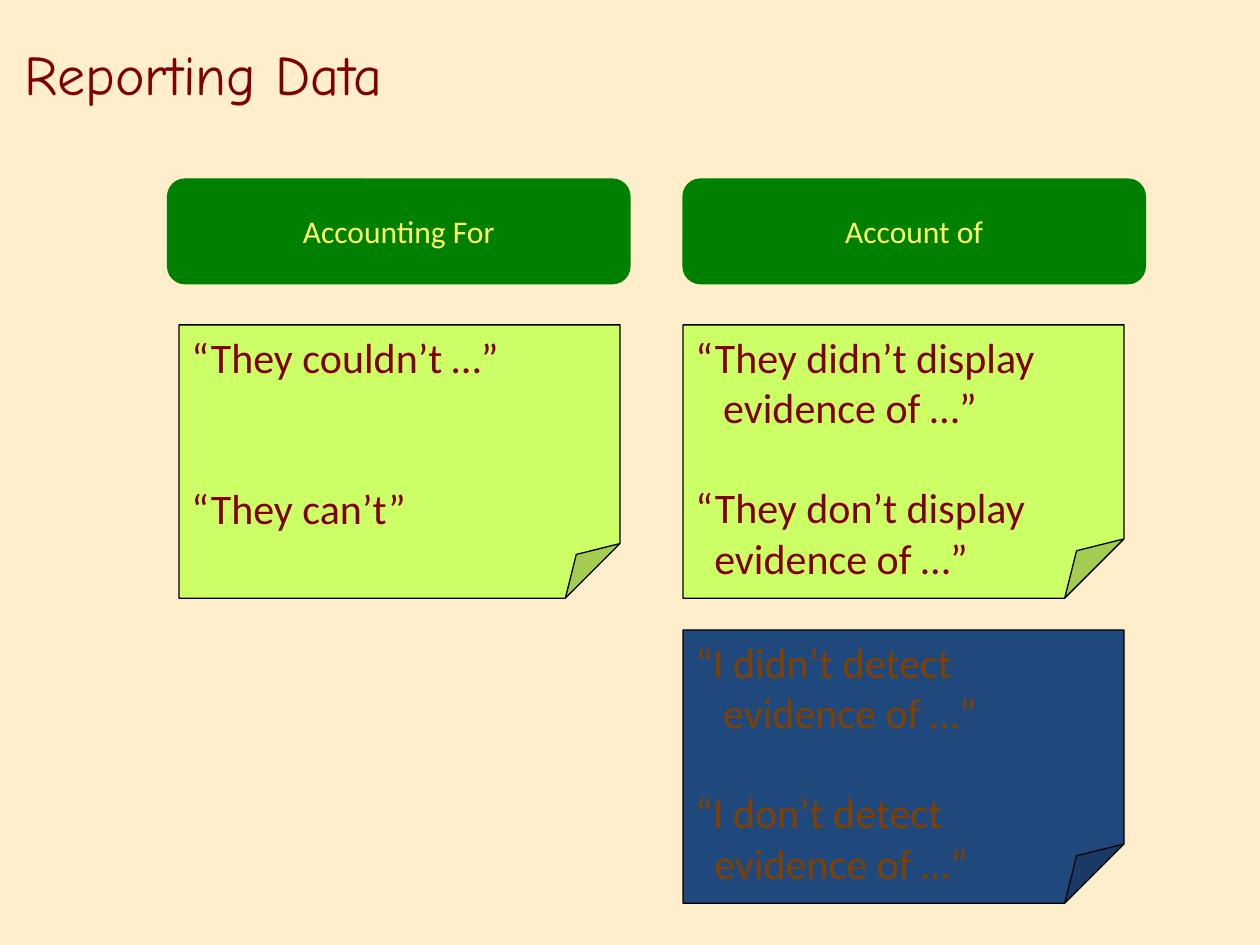
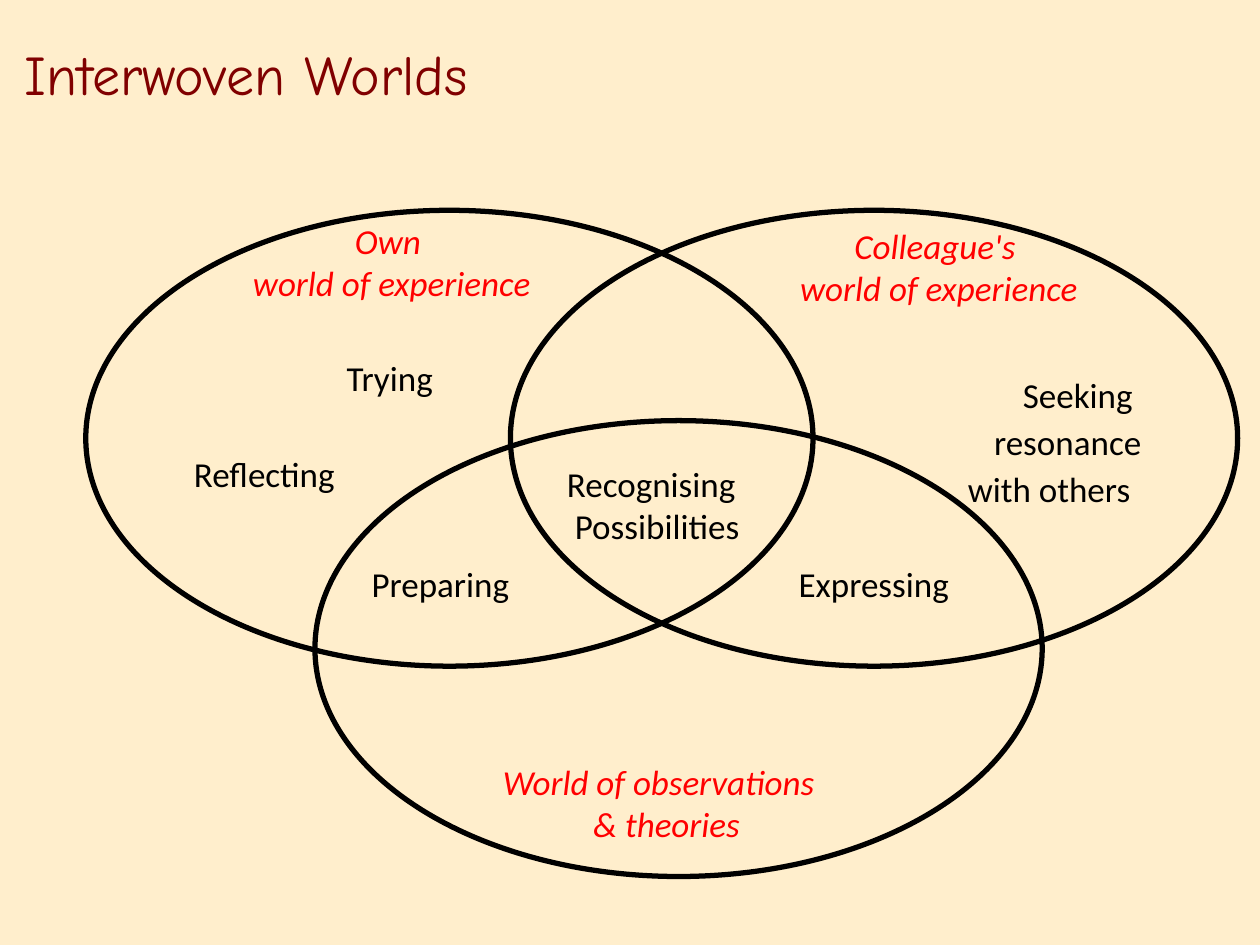
"""Build two slides on reporting data and interwoven worlds."""
from pptx import Presentation
from pptx.dml.color import RGBColor
from pptx.enum.shapes import MSO_SHAPE
from pptx.enum.text import MSO_ANCHOR, PP_ALIGN
from pptx.util import Cm, Pt


class Theme:
    paper = RGBColor.from_string("FFEECC")
    maroon = RGBColor.from_string("800000")
    brown = RGBColor.from_string("804000")
    green = RGBColor.from_string("008000")
    lime = RGBColor.from_string("CCFF66")
    navy = RGBColor.from_string("1F497D")
    lemon = RGBColor.from_string("FFFF66")
    red = RGBColor.from_string("FF0000")
    black = RGBColor.from_string("000000")
    title = {"name": "Comic Neue", "size": Pt(32)}
    head = {"name": "Calibri", "size": Pt(18)}
    note = {"name": "Calibri", "size": Pt(24)}
    label = {"name": "Calibri", "size": Pt(20)}
    world = {"name": "Calibri", "size": Pt(20), "italic": True}
    thin, thick = Pt(0.75), Pt(3)


def draw(slide, kind, box, fill, edge, width):
    shape = slide.shapes.add_shape(kind, *map(Cm, box))
    shape.shadow.inherit = False
    if fill is None:
        shape.fill.background()
    else:
        shape.fill.solid()
        shape.fill.fore_color.rgb = fill
    shape.line.color.rgb = edge
    shape.line.width = width
    return shape


def write(shape, paras, font, color, align=PP_ALIGN.LEFT, anchor=MSO_ANCHOR.TOP):
    frame = shape.text_frame
    frame.word_wrap = True
    frame.vertical_anchor = anchor
    for i, text in enumerate(paras):
        para = frame.add_paragraph() if i else frame.paragraphs[0]
        para.text = text
        para.alignment = align
        for run in para.runs:
            for key, value in font.items():
                setattr(run.font, key, value)
            run.font.color.rgb = color
    return frame


deck = Presentation()
deck.slide_width, deck.slide_height = Cm(25.4), Cm(19.05)
back = deck.slide_master.background.fill
back.solid()
back.fore_color.rgb = Theme.paper

pages = []
for title in ("Reporting Data", "Interwoven Worlds"):
    page = deck.slides.add_slide(deck.slide_layouts[6])
    box = page.shapes.add_textbox(Cm(0.25), Cm(0.3), Cm(18.72), Cm(2.34))
    write(box, [title], Theme.title, Theme.maroon, anchor=MSO_ANCHOR.MIDDLE)
    pages.append(page)
data, worlds = pages

for left, text in ((3.38, "Accounting For"), (13.77, "Account of")):
    head = draw(data, MSO_SHAPE.ROUNDED_RECTANGLE, (left, 3.61, 9.32, 2.11),
                Theme.green, Theme.green, Theme.thin)
    write(head, [text], Theme.head, Theme.lemon, PP_ALIGN.CENTER, MSO_ANCHOR.MIDDLE)

notes = (
    (3.61, 6.55, 20000, Theme.lime, Theme.maroon, 57.5,
     ("“They couldn’t …”", "“They can’t”")),
    (13.77, 6.55, 21700, Theme.lime, Theme.maroon, 28.5,
     ("“They didn’t display\vevidence of …”", "“They don’t display\vevidence of …”")),
    (13.77, 12.7, 21700, Theme.navy, Theme.brown, 28.5,
     ("“I didn’t detect\vevidence of …”", "“I don’t detect\vevidence of …”")),
)
for left, top, fold, fill, ink, gap, quotes in notes:
    note = draw(data, MSO_SHAPE.FOLDED_CORNER, (left, top, 8.89, 5.51),
                fill, Theme.black, Theme.thin)
    note._element.spPr.prstGeom.rewrite_guides([("adj", fold)])
    frame = write(note, quotes, Theme.note, ink)
    frame.paragraphs[1].space_before = Pt(gap)
    for para, hang in zip(frame.paragraphs, (0.56, 0.38)):
        props = para._p.get_or_add_pPr()
        props.set("marL", str(Cm(hang)))
        props.set("indent", str(-Cm(hang)))

for left, top in ((6.35, 8.48), (1.73, 4.24), (10.29, 4.24)):
    draw(worlds, MSO_SHAPE.OVAL, (left, top, 14.66, 9.19),
         None, Theme.black, Theme.thick)

names = (
    (4.01, 4.42, 7.62, "Own\v world of experience"),
    (15.04, 4.52, 7.62, "Colleague's\v world of experience"),
    (9.7, 15.34, 7.32, "World of observations \v & theories"),
)
acts = (
    (6.99, 7.19, 2.01, "Trying"),
    (3.91, 9.12, 3.28, "Reflecting"),
    (20.62, 7.52, 2.46, "Seeking"),
    (20.04, 8.48, 3.18, "resonance"),
    (19.51, 9.42, 3.68, "with others"),
    (11.43, 9.32, 3.91, "Recognising\v Possibilities"),
    (16.1, 11.33, 3.35, "Expressing"),
    (7.49, 11.33, 3.1, "Preparing"),
)
for group, font, ink, align in (
    (names, Theme.world, Theme.red, PP_ALIGN.CENTER),
    (acts, Theme.label, Theme.black, PP_ALIGN.LEFT),
):
    for left, top, width, text in group:
        high = 0.85 * (1 + text.count("\v"))
        box = worlds.shapes.add_textbox(Cm(left), Cm(top), Cm(width), Cm(high))
        frame = write(box, [text], font, ink, align)
        for side in ("left", "right", "top", "bottom"):
            setattr(frame, f"margin_{side}", 0)

deck.save("out.pptx")
